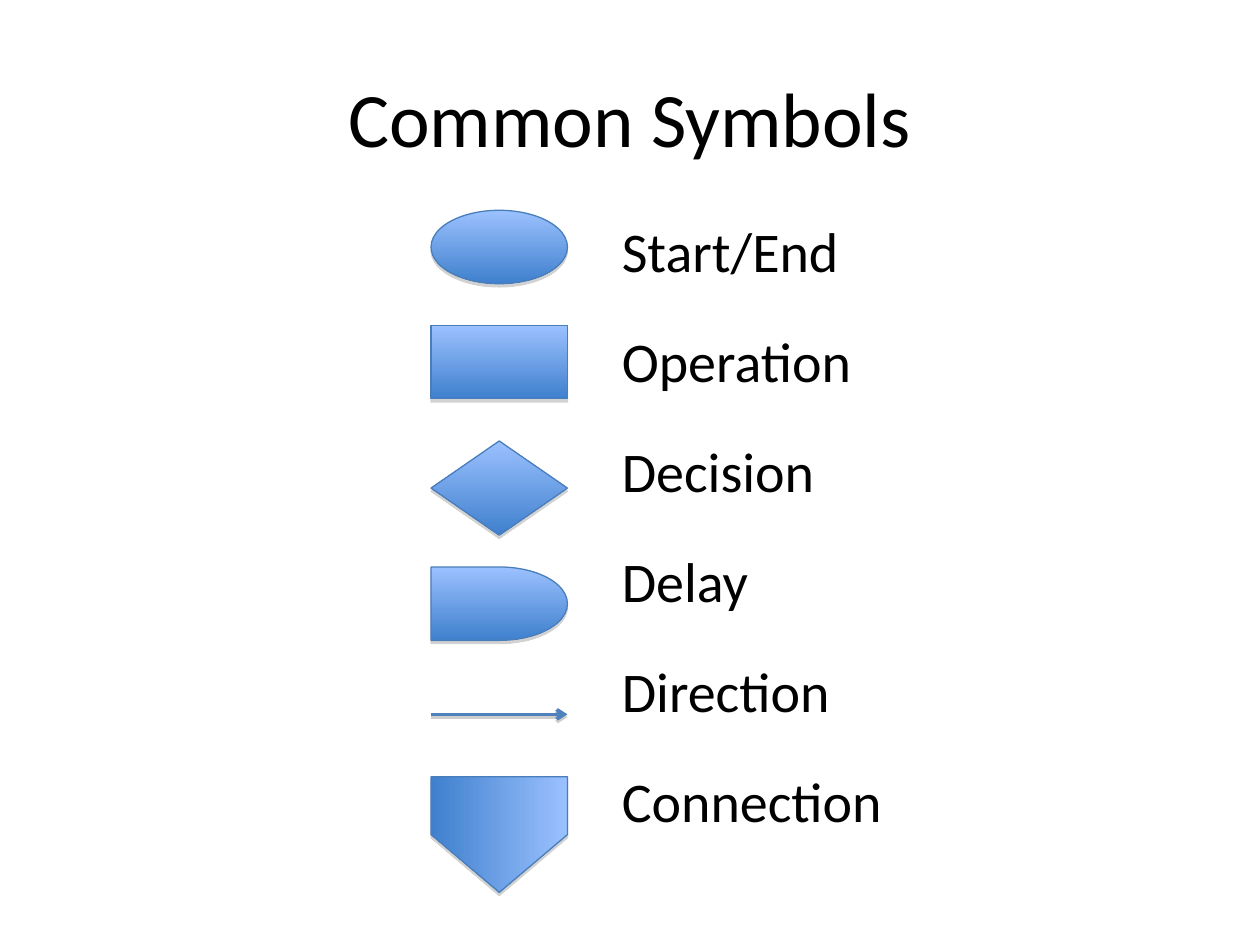
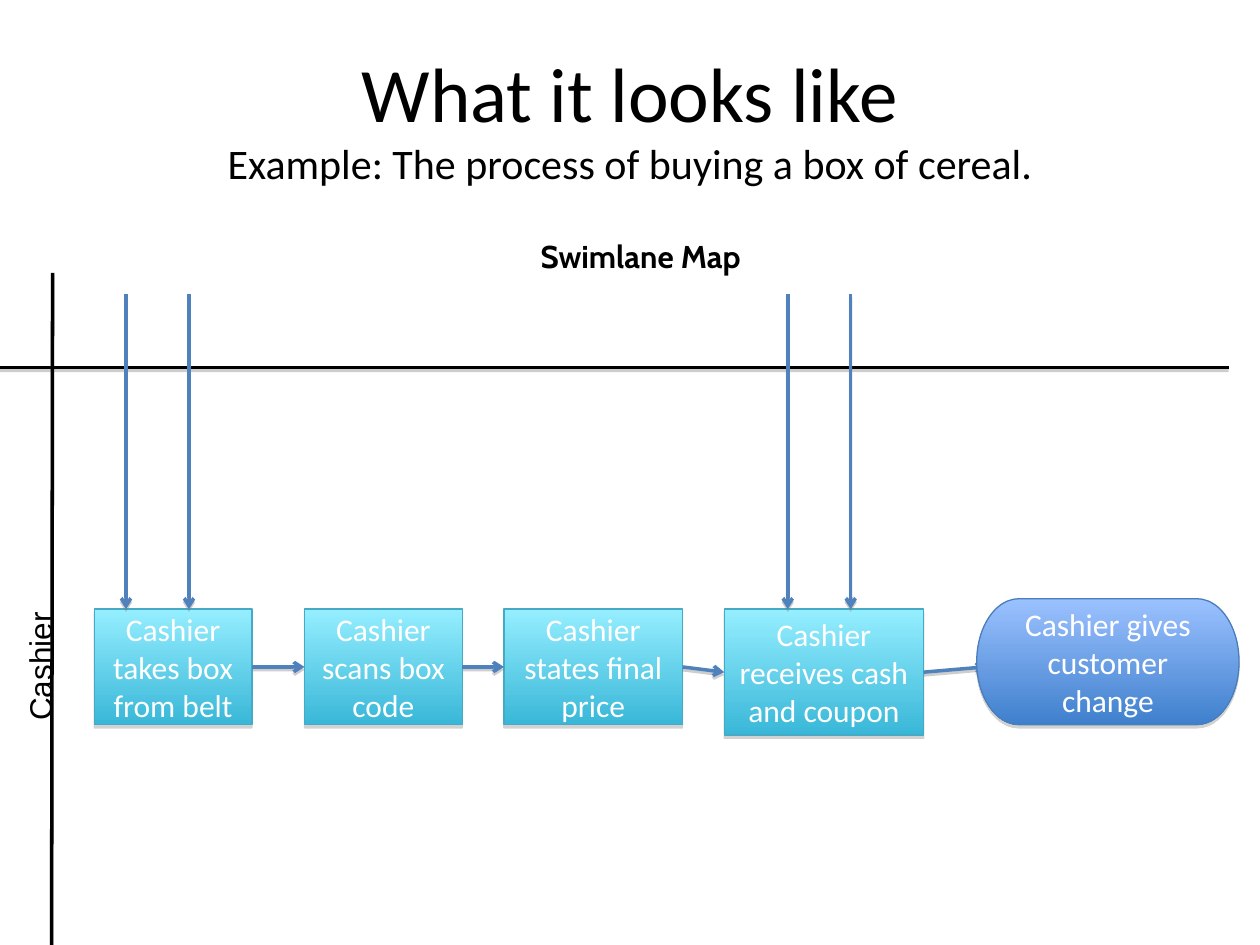
import pptx
import pptx.dml.color
import pptx.enum.shapes
import pptx.enum.text
import pptx.oxml
import pptx.oxml.ns
import pptx.util

Cm, Pt = pptx.util.Cm, pptx.util.Pt
KIND = pptx.enum.shapes.MSO_SHAPE
ALIGN = pptx.enum.text.PP_ALIGN
ANCHOR = pptx.enum.text.MSO_ANCHOR
FIT = pptx.enum.text.MSO_AUTO_SIZE

# Content of slide 1: lengths in cm
SYMBOLS_TITLE = "Common Symbols"
SYMBOL_NAMES = ["Start/End", "Operation", "Decision", "Delay", "Direction", "Connection"]
SYMBOL_LEFT, SYMBOL_WIDTH = 8.69, 2.75
SYMBOLS = [  # kind, top, height
    (KIND.OVAL, 4.24, 1.48),
    (KIND.FLOWCHART_PROCESS, 6.56, 1.48),
    (KIND.FLOWCHART_DECISION, 8.89, 1.9),
    (KIND.FLOWCHART_DELAY, 11.43, 1.48),
]
DIRECTION_Y = 14.4
CONNECTION_TOP, CONNECTION_HEIGHT = 15.66, 2.33

# Content of slide 2
EXAMPLE_TITLE = "What it looks like"
EXAMPLE_SUBTITLE = "Example: The process of buying a box of cereal."
MAP_NAME, LANE_NAME = "Swimlane Map", "Cashier"
STEP_TOP = 12.28
STEPS = [  # text, left, width, height
    ("Cashier takes box from belt", 1.9, 3.18, 2.33),
    ("Cashier scans box code", 6.14, 3.18, 2.33),
    ("Cashier states final price", 10.16, 3.6, 2.33),
    ("Cashier receives cash and coupon", 14.6, 4.02, 2.54),
]
LAST_STEP = "Cashier gives customer change"
LAST_STEP_PLACE = (19.69, 12.07, 5.29, 2.54)
LAST_ARROW_END = (19.9, 13.44)
INCOMING_X = [2.54, 3.81, 15.88, 17.15]
INCOMING_TOP = 5.93
LANE_BORDERS = [((0, 7.41), (24.77, 7.41)), ((1.06, 5.5), (1.04, 19.05))]

# Shared colours: gradient top, gradient bottom, outline
BLUE = ("9BC1FF", "3F80CD", "4A7EBB")
AQUA = ("95EEFF", "39B7D8", "46AAC5")
ARROW_BLUE, BLACK, WHITE = "4F81BD", "000000", "FFFFFF"


def colour(value):
    return pptx.dml.color.RGBColor.from_string(value)


def write(frame, text, font="Calibri", size=18, color=BLACK, bold=False,
          align=None, after=None, new_paragraph=False):
    """Add formatted text to the last paragraph or to a new one."""
    para = frame.add_paragraph() if new_paragraph else frame.paragraphs[-1]
    if align is not None:
        para.alignment = align
    if after is not None:
        para.space_after = Pt(after)
    span = para.add_run()
    span.text = text
    span.font.name, span.font.size, span.font.bold = font, Pt(size), bold
    span.font.color.rgb = colour(color)
    return para


def add_shadow(shape, distance, opacity):
    shape.element.spPr.append(pptx.oxml.parse_xml(
        f'<a:effectLst {pptx.oxml.ns.nsdecls("a")}>'
        f'<a:outerShdw blurRad="0" dist="{Pt(distance)}" dir="5400000" rotWithShape="0">'
        f'<a:srgbClr val="808080"><a:alpha val="{opacity * 1000}"/></a:srgbClr>'
        '</a:outerShdw></a:effectLst>'))


def add_symbol(slide, kind, left, top, width, height, palette=BLUE, text=None):
    shape = slide.shapes.add_shape(kind, Cm(left), Cm(top), Cm(width), Cm(height))
    shape.fill.gradient()
    shape.fill.gradient_angle = 270
    for stop, value in zip(shape.fill.gradient_stops, palette):
        stop.color.rgb = colour(value)
    shape.line.color.rgb = colour(palette[2])
    shape.line.width = Pt(0.75)
    add_shadow(shape, 1.8, 35)
    if text:
        shape.text_frame.vertical_anchor = ANCHOR.MIDDLE
        write(shape.text_frame, text, color=WHITE, align=ALIGN.CENTER)
    return shape


def add_line(slide, start, end, color=ARROW_BLUE, arrow=True):
    line = slide.shapes.add_connector(
        pptx.enum.shapes.MSO_CONNECTOR.STRAIGHT, *map(Cm, start + end))
    line.line.color.rgb = colour(color)
    line.line.width = Pt(2)
    if arrow:
        line.line._get_or_add_ln().append(pptx.oxml.parse_xml(
            f'<a:tailEnd {pptx.oxml.ns.nsdecls("a")} type="arrow"/>'))
    add_shadow(line, 1.6, 38)


def add_text_box(slide, left, top, width, height):
    box = slide.shapes.add_textbox(Cm(left), Cm(top), Cm(width), Cm(height))
    box.text_frame.word_wrap = True
    return box


def add_slide(deck, layout, title, subtitle=None):
    slide = deck.slides.add_slide(deck.slide_layouts[layout])
    frame = slide.shapes.title.text_frame
    frame.auto_size = FIT.NONE
    frame.vertical_anchor = ANCHOR.MIDDLE
    para = write(frame, title, size=44, align=ALIGN.CENTER)
    if subtitle:
        para.add_line_break()
        write(frame, subtitle, size=24)
    return slide


def build_symbols(deck):
    slide = add_slide(deck, 1, SYMBOLS_TITLE)

    # Names
    body = slide.placeholders[1]
    body.left, body.top, body.width, body.height = map(Cm, (12.28, 4.24, 10.37, 13.2))
    body.text_frame.auto_size = FIT.NONE
    for index, name in enumerate(SYMBOL_NAMES):
        para = write(body.text_frame, name, size=32, after=18, new_paragraph=index > 0)
        para._p.get_or_add_pPr().append(pptx.oxml.parse_xml(
            f'<a:buNone {pptx.oxml.ns.nsdecls("a")}/>'))

    # Symbols
    for kind, top, height in SYMBOLS:
        add_symbol(slide, kind, SYMBOL_LEFT, top, SYMBOL_WIDTH, height)
    add_line(slide, (SYMBOL_LEFT, DIRECTION_Y), (SYMBOL_LEFT + SYMBOL_WIDTH, DIRECTION_Y))

    # The connection symbol is turned, so its frame swaps width and height
    shift = (SYMBOL_WIDTH - CONNECTION_HEIGHT) / 2
    connection = add_symbol(slide, KIND.PENTAGON, SYMBOL_LEFT + shift, CONNECTION_TOP - shift,
                            CONNECTION_HEIGHT, SYMBOL_WIDTH)
    connection.rotation = 90


def build_swimlane(deck):
    slide = add_slide(deck, 5, EXAMPLE_TITLE, EXAMPLE_SUBTITLE)

    # Map and lane names
    box = add_text_box(slide, 5.08, 4.65, 15.67, 1.02)
    write(box.text_frame, MAP_NAME, font="Cabin", bold=True, align=ALIGN.CENTER)
    box = add_text_box(slide, 0, 11, 1.3, 3.78)
    box.rotation = 180
    box.text_frame.vertical_anchor = ANCHOR.BOTTOM
    box.text_frame._txBody.bodyPr.set("vert", "eaVert")
    write(box.text_frame, LANE_NAME, font="Arial", align=ALIGN.CENTER)

    # Lane borders
    for start, end in LANE_BORDERS:
        add_line(slide, start, end, color=BLACK, arrow=False)

    # Steps and the arrows into them
    for text, left, width, height in STEPS:
        add_symbol(slide, KIND.FLOWCHART_PROCESS, left, STEP_TOP, width, height, AQUA, text)
    for x in INCOMING_X:
        add_line(slide, (x, INCOMING_TOP), (x, STEP_TOP))

    # Each arrow joins the middle of one side to the next
    exits = [(left + width, STEP_TOP + height / 2) for _, left, width, height in STEPS]
    entries = [(left, STEP_TOP + height / 2) for _, left, _, height in STEPS[1:]]
    for start, end in zip(exits, entries + [LAST_ARROW_END]):
        add_line(slide, start, end)
    add_symbol(slide, KIND.FLOWCHART_TERMINATOR, *LAST_STEP_PLACE, text=LAST_STEP)


def main():
    deck = pptx.Presentation()
    deck.slide_width, deck.slide_height = Cm(25.4), Cm(19.05)
    build_symbols(deck)
    build_swimlane(deck)
    deck.save("out.pptx")


if __name__ == "__main__":
    main()
